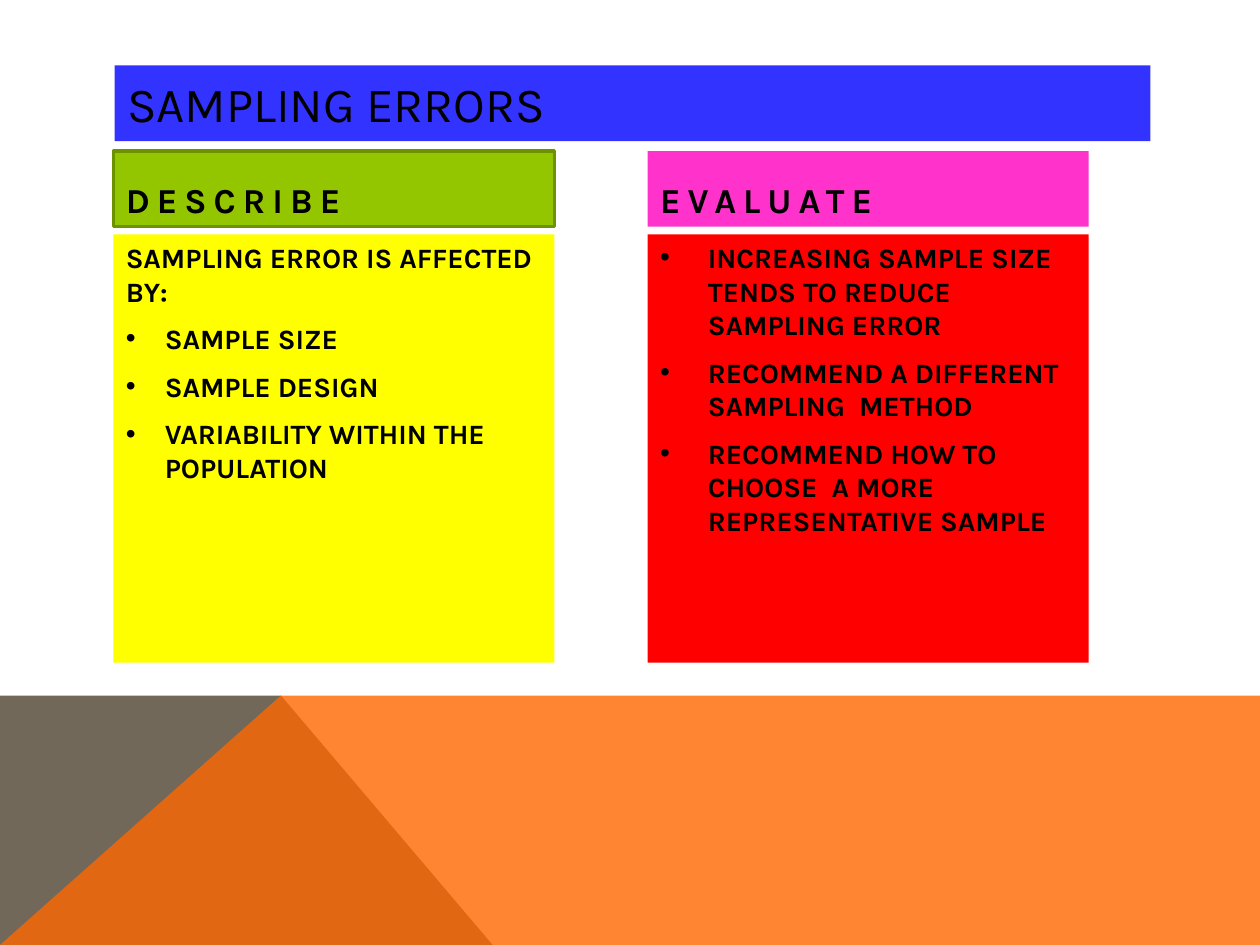
from lxml.etree import SubElement
from pptx import Presentation
from pptx.dml.color import RGBColor
from pptx.enum.shapes import MSO_SHAPE as Shape
from pptx.enum.text import MSO_ANCHOR as Anchor, PP_ALIGN as Align
from pptx.oxml.ns import qn
from pptx.util import Inches, Pt

# Grid in inches: two columns, a header row and a body row
COLUMNS = (0.9, 5.14)
COLUMN_WIDTH = 3.5
HEADER_TOP, HEADER_HEIGHT = 1.2, 0.6
BODY_TOP, BODY_HEIGHT = 1.86, 3.4
FLOOR_TOP, FLOOR_PEAK = 5.52, 2.23

TITLE_FONT = {"name": "Karla", "size": Pt(28), "bold": False}
HEADER_FONT = {"name": "Karla", "size": Pt(20), "bold": True}
BODY_FONT = {"name": "Karla", "size": Pt(16), "bold": True}

SECTIONS = [
    {
        "header": "DESCRIBE", "header_fill": "94C600", "border": "6D9200",
        "body_fill": "FFFF00", "indent": 0.31,
        "intro": "SAMPLING ERROR IS AFFECTED BY:",
        "points": ["SAMPLE SIZE", "SAMPLE DESIGN",
                   "VARIABILITY WITHIN THE POPULATION"],
    },
    {
        "header": "EVALUATE", "header_fill": "FF33CC", "border": None,
        "body_fill": "FF0000", "indent": 0.38,
        "intro": None,
        "points": ["INCREASING SAMPLE SIZE TENDS TO REDUCE SAMPLING ERROR",
                   "RECOMMEND A DIFFERENT SAMPLING  METHOD",
                   "RECOMMEND HOW TO CHOOSE  A MORE REPRESENTATIVE SAMPLE"],
    },
]


def paint(color_owner, hex_color):
    """Give a fill or a font a solid colour."""
    if hasattr(color_owner, "solid"):
        color_owner.solid()
        color_owner.fore_color.rgb = RGBColor.from_string(hex_color)
    else:
        color_owner.color.rgb = RGBColor.from_string(hex_color)


def add_floor(slide, corners, color, opacity=None):
    """Draw one facet of the floor, optionally see-through."""
    points = [(Inches(x), Inches(y)) for x, y in corners]
    outline = slide.shapes.build_freeform(*points[0], scale=1.0)
    outline.add_line_segments(points[1:], close=True)
    facet = outline.convert_to_shape()
    facet.shadow.inherit = False
    facet.line.fill.background()
    paint(facet.fill, color)
    if opacity is not None:
        rgb = facet.fill._xPr.find(qn("a:solidFill"))[0]
        SubElement(rgb, qn("a:alpha"), val=str(opacity * 1000))


def add_panel(slide, left, top, width, height, color, anchor, border=None):
    """Draw a filled panel and return its text frame."""
    panel = slide.shapes.add_shape(
        Shape.RECTANGLE, *map(Inches, (left, top, width, height)))
    panel.shadow.inherit = False
    paint(panel.fill, color)
    if border:
        paint(panel.line.fill, border)
        panel.line.width = Pt(2)
    else:
        panel.line.fill.background()
    frame = panel.text_frame
    frame.word_wrap = True
    frame.vertical_anchor = anchor
    return frame


def write(paragraph, text, font_format, indent=None, spacing=None):
    """Fill a paragraph; an indent makes it a bullet point."""
    paragraph.alignment = Align.LEFT
    paragraph.space_before = Pt(8)
    run = paragraph.add_run()
    run.text = text
    for attribute, value in font_format.items():
        setattr(run.font, attribute, value)
    paint(run.font, "000000")
    if spacing:
        run.font._element.set("spc", str(spacing * 100))
    if indent:
        properties = paragraph._p.get_or_add_pPr()
        properties.set("marL", str(Inches(indent)))
        properties.set("indent", str(-Inches(indent)))
        SubElement(properties, qn("a:buFont"), typeface="Arial")
        SubElement(properties, qn("a:buChar"), char="•")


def add_section(slide, left, section):
    """Draw a column: header panel above a body panel."""
    header = add_panel(slide, left, HEADER_TOP, COLUMN_WIDTH, HEADER_HEIGHT,
                       section["header_fill"], Anchor.BOTTOM, section["border"])
    write(header.paragraphs[0], section["header"], HEADER_FONT, spacing=4)

    body = add_panel(slide, left, BODY_TOP, COLUMN_WIDTH, BODY_HEIGHT,
                     section["body_fill"], Anchor.TOP)
    lines = [(point, section["indent"]) for point in section["points"]]
    if section["intro"]:
        lines.insert(0, (section["intro"], None))
    for number, (text, indent) in enumerate(lines):
        paragraph = body.add_paragraph() if number else body.paragraphs[0]
        write(paragraph, text, BODY_FONT, indent)


def main():
    deck = Presentation()
    deck.slide_width, deck.slide_height = Inches(10), Inches(7.5)
    slide = deck.slides.add_slide(deck.slide_layouts[6])

    # Floor
    peak = (FLOOR_PEAK, FLOOR_TOP)
    add_floor(slide, [(0, 7.5), (0, FLOOR_TOP), peak, (3.91, 7.5)], "71685A")
    add_floor(slide, [(0, 7.5), peak, (10, FLOOR_TOP), (10, 7.5)],
              "FF6700", opacity=80)

    # Title
    title = add_panel(slide, 0.91, 0.52, 8.22, 0.6, "3333FF", Anchor.MIDDLE)
    write(title.paragraphs[0], "SAMPLING ERRORS", TITLE_FONT)

    # Columns
    for left, section in zip(COLUMNS, SECTIONS):
        add_section(slide, left, section)

    deck.save("out.pptx")


if __name__ == "__main__":
    main()
